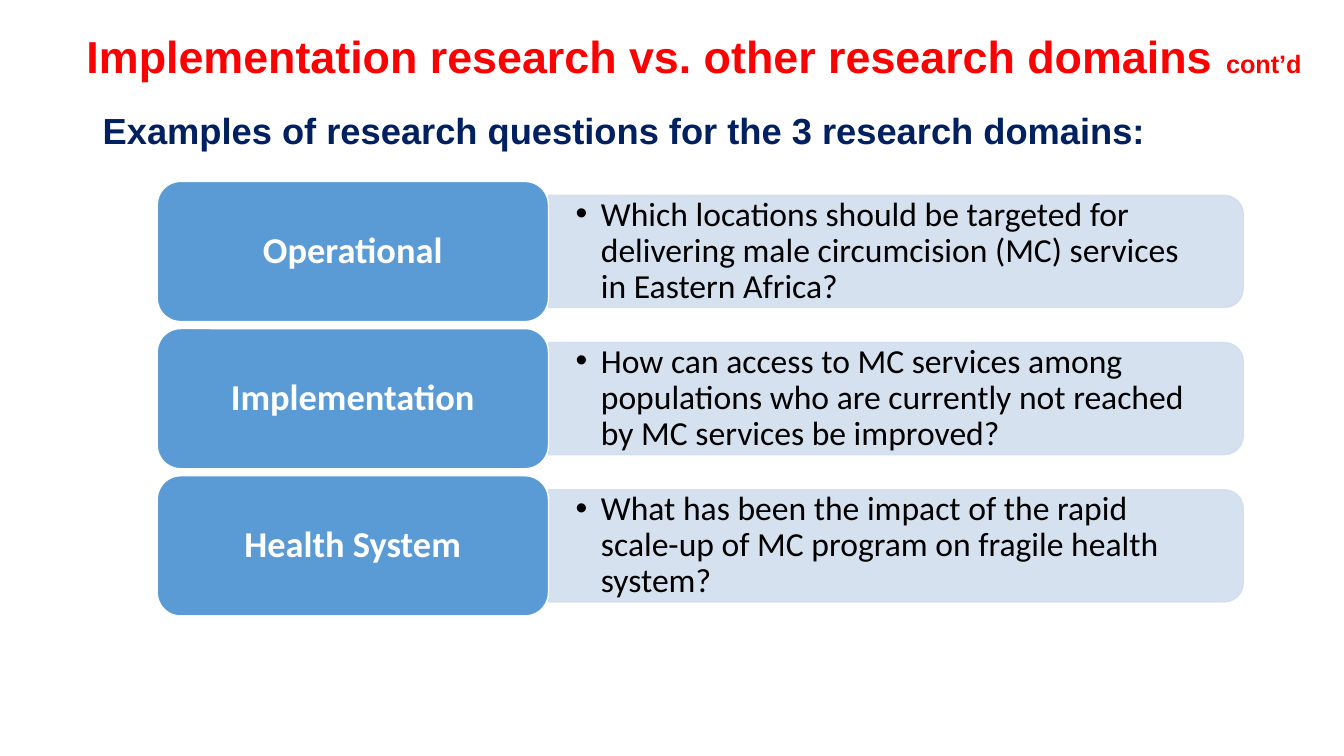
from pptx import Presentation
from pptx.dml.color import RGBColor
from pptx.enum.shapes import MSO_SHAPE
from pptx.enum.text import MSO_ANCHOR, PP_ALIGN
from pptx.oxml.ns import qn
from pptx.util import Inches, Pt
from lxml import etree

ROUNDED = MSO_SHAPE.ROUNDED_RECTANGLE
ROUNDED_TOP = MSO_SHAPE.ROUND_2_SAME_RECTANGLE
MIDDLE, TOP = MSO_ANCHOR.MIDDLE, MSO_ANCHOR.TOP
LEFT, CENTER = PP_ALIGN.LEFT, PP_ALIGN.CENTER

DOMAINS = [
    ("Operational", "Which locations should be targeted for delivering male "
     "circumcision (MC) services in Eastern Africa?"),
    ("Implementation", "How can access to MC services among populations who are "
     "currently not reached by MC services be improved?"),
    ("Health System", "What has been the impact of the rapid scale-up of MC "
     "program on fragile health system?"),
]


def rgb(value):
    return RGBColor.from_string(value)


def style_run(run, size, font, color, bold):
    run.font.size = Pt(size)
    run.font.name = font
    run.font.bold = bold
    run.font.color.rgb = rgb(color)


def write(shape, text, size, font, color, bold=True, align=LEFT, anchor=MIDDLE,
          insets=(0.1, 0.05)):
    frame = shape.text_frame
    frame.word_wrap = True
    frame.vertical_anchor = anchor
    frame.margin_left = frame.margin_right = Inches(insets[0])
    frame.margin_top = frame.margin_bottom = Inches(insets[1])
    frame.text = text
    paragraph = frame.paragraphs[0]
    paragraph.alignment = align
    paragraph.line_spacing = 0.9
    style_run(paragraph.runs[0], size, font, color, bold)
    return paragraph


def add_text(slide, box, *args, **options):
    text_box = slide.shapes.add_textbox(*map(Inches, box))
    return write(text_box, *args, **options)


def add_block(slide, kind, box, fill, line):
    block = slide.shapes.add_shape(kind, *map(Inches, box))
    block.shadow.inherit = False
    block.fill.solid()
    block.fill.fore_color.rgb = rgb(fill)
    block.line.color.rgb = rgb(line)
    block.line.width = Pt(1)
    return block


def add_bullet(paragraph, indent):
    paragraph.level = 1
    properties = paragraph._p.get_or_add_pPr()
    properties.set("marL", str(Inches(indent)))
    properties.set("indent", str(-Inches(indent)))
    etree.SubElement(properties, qn("a:buFont")).set("typeface", "Arial")
    etree.SubElement(properties, qn("a:buChar")).set("char", "•")


def add_heading(slide, left, top, width):
    title = add_text(slide, (left, top, width, 0.53),
                     "Implementation research vs. other research domains ",
                     32, "Arial", "FF0000")
    continued = title.add_run()
    continued.text = "cont’d"
    style_run(continued, 18, "Arial", "FF0000", True)
    add_text(slide, (left + 0.16, top + 0.75, 11.02, 0.61),
             "Examples of research questions for the 3 research domains:",
             25.9, "Arial", "002060", anchor=TOP)


def add_question(slide, left, top, width, height, question):
    panel = add_block(slide, ROUNDED_TOP,
                      (left + (width - height) / 2, top + (height - width) / 2,
                       height, width), "D2DEEF", "D2DEEF")
    panel.rotation = 90
    for color in panel._element.spPr.iter(qn("a:srgbClr")):
        etree.SubElement(color, qn("a:alpha")).set("val", "90000")
    paragraph = add_text(slide, (left, top + 0.05, width - 0.05, height - 0.1),
                         question, 24, "Calibri", "000000", bold=False,
                         insets=(0.27, 0.14))
    add_bullet(paragraph, 0.25)


def add_domain(slide, left, top, width, height, name, question):
    name_width = 3.88
    question_height = 0.8 * height
    add_question(slide, left + name_width, top + (height - question_height) / 2,
                 width - name_width, question_height, question)
    name_block = add_block(slide, ROUNDED, (left, top, name_width, height),
                           "5B9BD5", "FFFFFF")
    write(name_block, name, 26, "Calibri", "FFFFFF", align=CENTER,
          insets=(0.11, 0.05))


def add_domains(slide, left, top, width, height):
    gap = 0.07
    row_height = (height - gap * (len(DOMAINS) - 1)) / len(DOMAINS)
    for row, (name, question) in enumerate(DOMAINS):
        add_domain(slide, left, top + row * (row_height + gap), width,
                   row_height, name, question)


def main():
    deck = Presentation()
    deck.slide_width, deck.slide_height = Inches(13.33), Inches(7.5)
    slide = deck.slides.add_slide(deck.slide_layouts[6])
    add_heading(slide, 0.76, 0.32, 12.34)
    add_domains(slide, 1.56, 1.8, 10.77, 4.31)
    deck.save("out.pptx")


if __name__ == "__main__":
    main()
